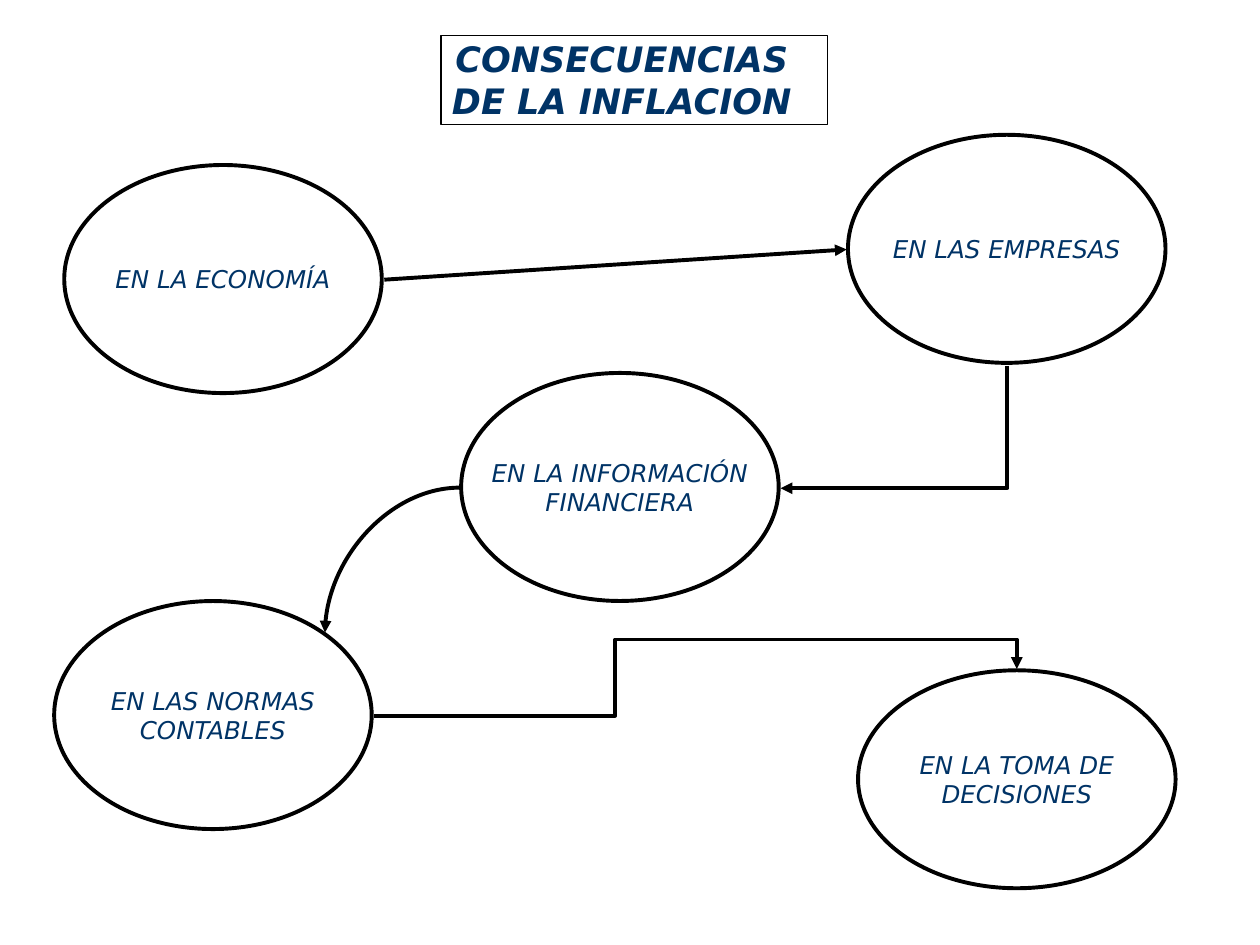
from lxml import etree
from pptx import Presentation
from pptx.dml.color import RGBColor
from pptx.enum.shapes import MSO_CONNECTOR, MSO_SHAPE
from pptx.enum.text import MSO_ANCHOR, MSO_AUTO_SIZE, PP_ALIGN
from pptx.oxml.ns import qn
from pptx.util import Inches, Pt

OVAL = MSO_SHAPE.OVAL
LINE, BENT, CURVE = MSO_CONNECTOR.STRAIGHT, MSO_CONNECTOR.ELBOW, MSO_CONNECTOR.CURVE
MIDDLE, CENTER = MSO_ANCHOR.MIDDLE, PP_ALIGN.CENTER
NO_FIT = MSO_AUTO_SIZE.NONE
BLACK, NAVY = "000000", "003366"


def color(code):
    return RGBColor.from_string(code)


def style(shape, size, bold, width):
    shape.fill.background()
    shape.line.color.rgb = color(BLACK)
    shape.line.width = Pt(width)
    frame = shape.text_frame
    frame.auto_size = NO_FIT
    frame.vertical_anchor = MIDDLE
    for para in frame.paragraphs:
        para.alignment = CENTER
        font = para.font
        font.name = "DejaVu Sans"
        font.size = Pt(size)
        font.bold = bold
        font.italic = True
        font.color.rgb = color(NAVY)


deck = Presentation()
deck.slide_width, deck.slide_height = Inches(10), Inches(7.5)
slide = deck.slides.add_slide(deck.slide_layouts[5])
shapes = slide.shapes

title = shapes.title
title.left, title.top = Inches(3.5), Inches(0.28)
title.width, title.height = Inches(3.07), Inches(0.71)
title.text_frame.text = "CONSECUENCIAS DE LA INFLACION"
title.text_frame.word_wrap = True
title.text_frame.margin_left = Inches(0)
title.text_frame.margin_right = Inches(0.2)
title.text_frame.margin_top = title.text_frame.margin_bottom = Inches(0)
style(title, 20, True, 0.75)

topics = [
    ("EN LA ECONOMÍA", 0.51, 1.31, 1.81),
    ("EN LAS NORMAS\nCONTABLES", 0.43, 4.77, 1.81),
    ("EN LAS EMPRESAS", 6.73, 1.07, 1.81),
    ("EN LA INFORMACIÓN\nFINANCIERA", 3.66, 2.96, 1.81),
    ("EN LA TOMA DE\nDECISIONES", 6.81, 5.32, 1.73),
]
for text, left, top, height in topics:
    oval = shapes.add_shape(OVAL, Inches(left), Inches(top), Inches(2.52), Inches(height))
    oval.shadow.inherit = False
    oval.text_frame.text = text
    oval.text_frame.word_wrap = False
    style(oval, 14, False, 2.25)

arrows = [
    (LINE, "line", (3.05, 2.22, 6.72, 1.98), 0, []),
    (BENT, "bentConnector2", (6.61, 2.49, 7.58, 4.29), 90, []),
    (CURVE, "curvedConnector2", (3.65, 3.87, 2.58, 5.02), 0, []),
    (BENT, "bentConnector4", (2.97, 5.68, 8.07, 5.31), 0, [37500, 163100]),
]
for kind, preset, ends, turn, bends in arrows:
    arrow = shapes.add_connector(kind, *[Inches(end) for end in ends])
    arrow.line.color.rgb = color(BLACK)
    arrow.line.width = Pt(2.25)
    props = arrow._element.spPr
    if turn:
        props.find(qn("a:xfrm")).set("rot", str(turn * 60000))
    geom = props.find(qn("a:prstGeom"))
    geom.set("prst", preset)
    guides = geom.find(qn("a:avLst"))
    for num, bend in enumerate(bends, 1):
        etree.SubElement(guides, qn("a:gd"), name=f"adj{num}", fmla=f"val {bend}")
    etree.SubElement(props.find(qn("a:ln")), qn("a:tailEnd"), type="triangle")
    etree.SubElement(props, qn("a:effectLst"))

deck.save("out.pptx")
